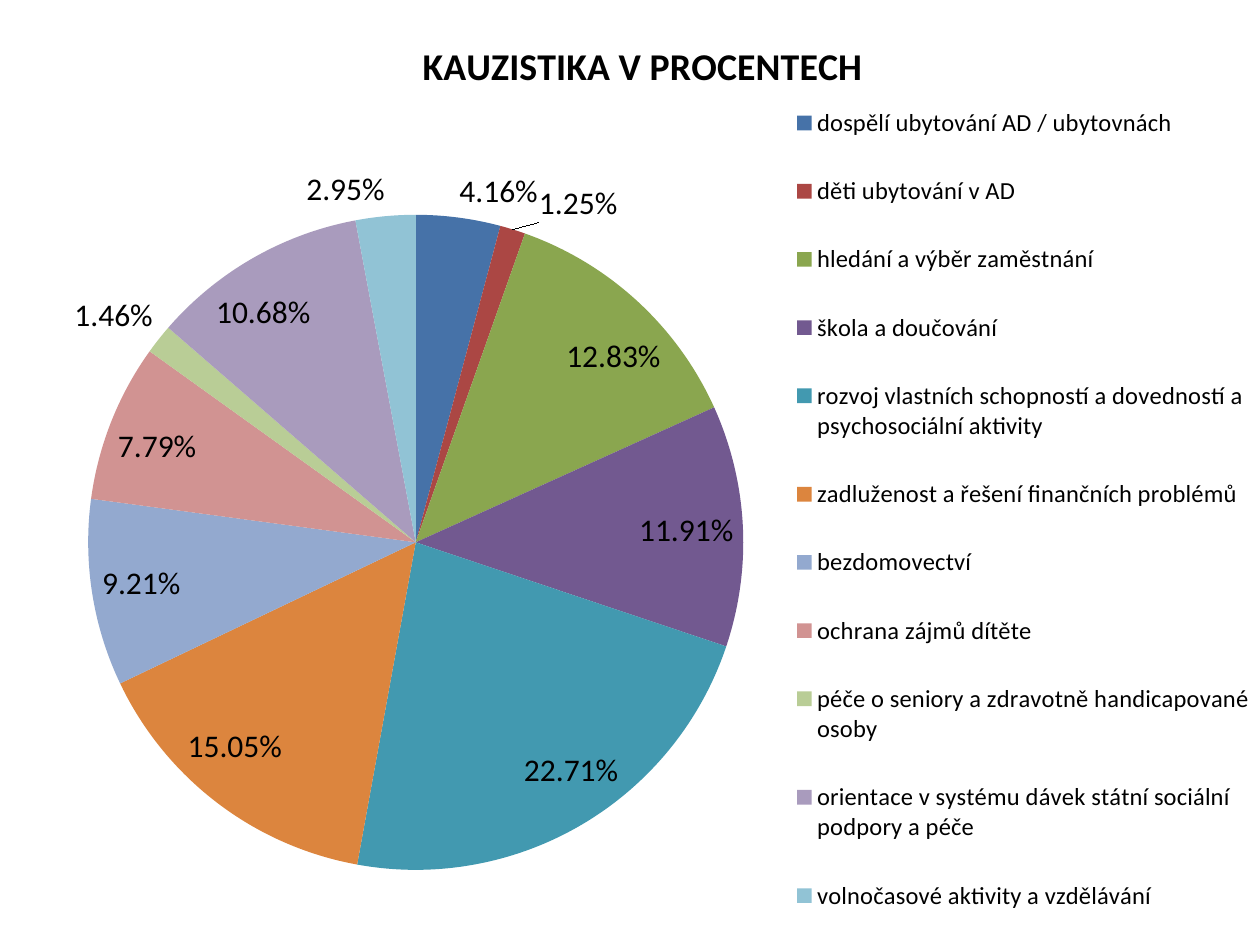
from dataclasses import dataclass

from lxml.etree import SubElement
from pptx import Presentation
from pptx.chart.chart import Chart
from pptx.chart.data import CategoryChartData
from pptx.dml.color import RGBColor
from pptx.enum.chart import XL_CHART_TYPE as ChartType
from pptx.enum.chart import XL_LABEL_POSITION as LabelPosition
from pptx.enum.chart import XL_LEGEND_POSITION as LegendPosition
from pptx.oxml.ns import qn
from pptx.oxml.xmlchemy import OxmlElement
from pptx.util import Inches, Pt


@dataclass(frozen=True)
class Theme:
    font: str = "Calibri"
    text: RGBColor = RGBColor(0, 0, 0)
    title_size: float = 21.6
    label_size: float = 18
    legend_size: float = 14


@dataclass(frozen=True)
class Slice:
    name: str
    share: float
    color: str


THEME = Theme()
TITLE = "KAUZISTIKA V PROCENTECH"
SLICES = [
    Slice("dospělí ubytování AD / ubytovnách", 0.0416, "4672A8"),
    Slice("děti ubytování v AD", 0.0125, "AB4744"),
    Slice("hledání a výběr zaměstnání", 0.1283, "8AA64F"),
    Slice("škola a doučování", 0.1191, "725990"),
    Slice("rozvoj vlastních schopností a dovedností a psychosociální aktivity", 0.2271, "4299B0"),
    Slice("zadluženost a řešení finančních problémů", 0.1505, "DC853E"),
    Slice("bezdomovectví", 0.0921, "93A9CF"),
    Slice("ochrana zájmů dítěte", 0.0779, "D19392"),
    Slice("péče o seniory a zdravotně handicapované osoby", 0.0146, "B9CD96"),
    Slice("orientace v systému dávek státní sociální podpory a péče", 0.1068, "A99BBD"),
    Slice("volnočasové aktivity a vzdělávání", 0.0295, "91C3D5"),
]


def place(element, index: int, inner: bool = False, **fractions: float) -> None:
    for previous in element.findall(qn("c:layout")):
        element.remove(previous)
    layout = OxmlElement("c:layout")
    manual = SubElement(layout, qn("c:manualLayout"))
    settings = {"layoutTarget": "inner"} if inner else {}
    settings |= {"xMode": "edge", "yMode": "edge"}
    settings |= {name: str(value) for name, value in fractions.items()}
    for name, value in settings.items():
        SubElement(manual, qn(f"c:{name}")).set("val", value)
    element.insert(index, layout)


def style_title(chart: Chart) -> None:
    chart.has_title = True
    title = chart.chart_title
    title.include_in_layout = False
    title.text_frame.text = TITLE
    font = title.text_frame.paragraphs[0].font
    font.name = THEME.font
    font.size = Pt(THEME.title_size)
    font.bold = True
    font.color.rgb = THEME.text
    place(title._element, 1, x=0.33, y=0.03)


def style_legend(chart: Chart) -> None:
    chart.has_legend = True
    legend = chart.legend
    legend.position = LegendPosition.RIGHT
    legend.include_in_layout = False
    legend.font.size = Pt(THEME.legend_size)
    legend.font.name = THEME.font
    legend.font.color.rgb = THEME.text
    place(legend._element, 1, x=0.63, y=0.07, w=0.37, h=0.93)


def style_pie(chart: Chart) -> None:
    plot = chart.plots[0]
    plot.vary_by_categories = True
    for index, item in enumerate(SLICES):
        fill = plot.series[0].points[index].format.fill
        fill.solid()
        fill.fore_color.rgb = RGBColor.from_string(item.color)
    plot.has_data_labels = True
    labels = plot.data_labels
    labels.show_value = True
    labels.show_percentage = False
    labels.number_format = "0.00%"
    labels.number_format_is_linked = False
    labels.position = LabelPosition.BEST_FIT
    labels.font.size = Pt(THEME.label_size)
    labels.font.name = THEME.font
    labels.font.color.rgb = THEME.text
    plot_area = chart._chartSpace.chart.plotArea
    place(plot_area, 0, inner=True, x=0.07, y=0.22, w=0.52, h=0.7)


def main() -> None:
    presentation = Presentation()
    presentation.slide_width = Inches(10)
    presentation.slide_height = Inches(7.5)
    slide = presentation.slides.add_slide(presentation.slide_layouts[6])
    data = CategoryChartData(number_format="0.00%")
    data.categories = [item.name for item in SLICES]
    data.add_series(TITLE, [item.share for item in SLICES])
    chart = slide.shapes.add_chart(
        ChartType.PIE, 0, Inches(0.03), Inches(10), Inches(7.5), data
    ).chart
    chart.font.name = THEME.font
    chart.font.size = Pt(THEME.label_size)
    chart.font.color.rgb = THEME.text
    style_title(chart)
    style_legend(chart)
    style_pie(chart)
    presentation.save("out.pptx")


if __name__ == "__main__":
    main()
